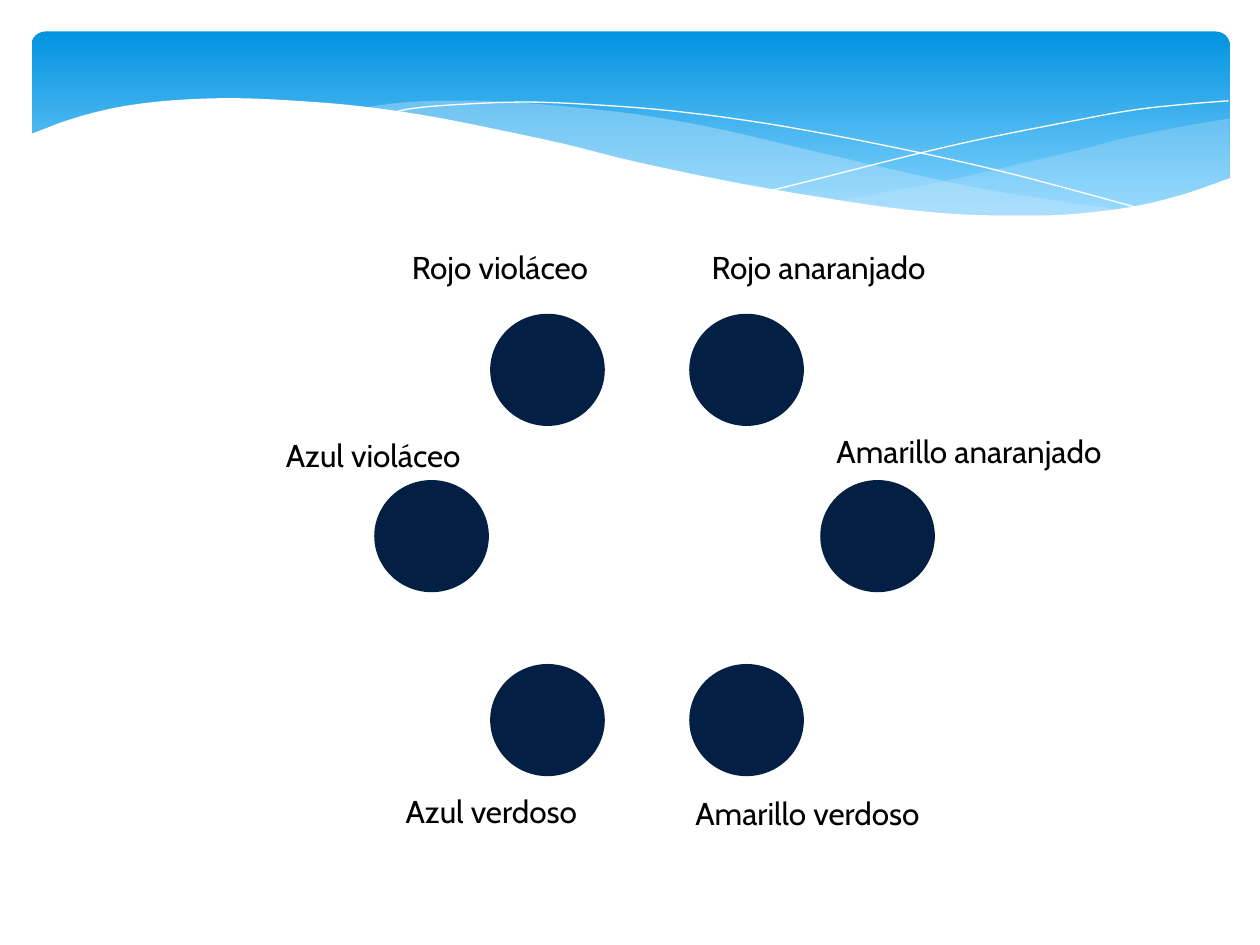
from dataclasses import dataclass

from lxml.etree import SubElement
from pptx import Presentation
from pptx.dml.color import RGBColor as RGB
from pptx.enum.shapes import MSO_SHAPE as Shape
from pptx.enum.text import MSO_AUTO_SIZE as AutoSize
from pptx.oxml.ns import qn
from pptx.util import Inches, Pt


@dataclass(frozen=True)
class Theme:
    font: str = "Cabin"
    label_size: int = 18
    text: str = "000000"
    paper: str = "FFFFFF"
    sky_top: str = "0293E0"
    sky_bottom: str = "83D3FE"
    ribbon: str = "C6E7FC"
    circle: str = "041F44"


CIRCLE_SIZE = (0.91, 0.89)

# Label, label box, wrap, circle position
COLOURS = [
    ("Rojo violáceo", (3.17, 1.92, 1.63, 0.4), False, (3.89, 2.49)),
    ("Rojo anaranjado", (5.55, 1.92, 1.94, 0.4), False, (5.47, 2.49)),
    ("Azul verdoso", (3.12, 6.24, 1.59, 0.4), False, (3.89, 5.27)),
    ("Amarillo anaranjado", (6.54, 3.38, 2.37, 0.4), True, (6.51, 3.81)),
    ("Amarillo verdoso", (5.42, 6.25, 2.01, 0.4), False, (5.47, 5.27)),
    ("Azul violáceo", (2.17, 3.41, 1.6, 0.4), False, (2.97, 3.81)),
]

RIGHT_RIBBON_TOP = [(9.76, 0.94), (9.35, 1.01), (8.91, 1.1), (8.61, 1.18),
                    (8.05, 1.31), (7.53, 1.43), (7.06, 1.52), (6.61, 1.6)]
RIGHT_RIBBON_BOTTOM = [(6.61, 1.6), (7.05, 1.65), (7.57, 1.7), (8.14, 1.72),
                       (8.63, 1.7), (9.05, 1.63), (9.42, 1.54), (9.76, 1.41)]
LONG_RIBBON_TOP = [(8.93, 1.67), (8.37, 1.59), (7.75, 1.49), (7.06, 1.34),
                   (6.29, 1.16), (5.69, 1.02), (5.14, 0.92), (4.65, 0.86),
                   (4.2, 0.82), (3.8, 0.8), (3.44, 0.8), (3.13, 0.82), (2.86, 0.86)]
LONG_RIBBON_BOTTOM = [(2.86, 0.86), (3.42, 0.94), (4.04, 1.06), (4.49, 1.16),
                      (5.3, 1.35), (6.01, 1.5), (6.65, 1.61), (7.22, 1.68),
                      (7.73, 1.72), (8.18, 1.73), (8.57, 1.71), (8.93, 1.67)]
FALLING_LINE = [(3.09, 0.9), (3.28, 0.86), (3.63, 0.83), (4.16, 0.81),
                (4.69, 0.83), (5.33, 0.88), (6.08, 0.98), (6.95, 1.14),
                (7.95, 1.36), (9.07, 1.66)]
RISING_LINE = [(6.13, 1.51), (6.53, 1.41), (7.2, 1.24), (7.76, 1.11),
               (8.36, 0.99), (8.95, 0.88), (9.38, 0.83), (9.75, 0.8)]
PAPER_EDGE = [(9.77, 1.41), (9.4, 1.54), (8.99, 1.64), (8.5, 1.7), (8.09, 1.71),
              (7.61, 1.7), (7.08, 1.65), (6.48, 1.56), (5.79, 1.44), (5.03, 1.28),
              (4.47, 1.14), (3.91, 1.02), (3.4, 0.92), (2.92, 0.85), (2.5, 0.81),
              (1.93, 0.78), (1.46, 0.79), (1.06, 0.83), (0.76, 0.89),
              (0.52, 0.96), (0.36, 1.02), (0.23, 1.07)]
PAPER_BASE = [(0.23, 2.24), (9.77, 2.24)]


def smooth(points, steps=5):
    """Return a Catmull-Rom curve that passes through the points."""
    padded = [points[0], *points, points[-1]]
    curve = [points[0]]
    for a, b, c, d in zip(padded, padded[1:], padded[2:], padded[3:]):
        for step in range(1, steps + 1):
            t = step / steps
            curve.append(tuple(
                0.5 * (2 * q + (r - p) * t + (2 * p - 5 * q + 4 * r - s) * t ** 2
                       + (3 * q - p - 3 * r + s) * t ** 3)
                for p, q, r, s in zip(a, b, c, d)))
    return curve


def set_values(target, values):
    for name, value in values.items():
        setattr(target, name, value)


class SlideBuilder:
    def __init__(self, slide, theme):
        self.slide = slide
        self.theme = theme

    def paint(self, shape, colour, opacity=100):
        shape.shadow.inherit = False
        shape.line.fill.background()
        shape.fill.solid()
        shape.fill.fore_color.rgb = RGB.from_string(colour)
        if opacity < 100:
            node = shape.element.spPr.find(".//" + qn("a:srgbClr"))
            SubElement(node, qn("a:alpha"), val=str(opacity * 1000))

    def sky(self, box):
        shape = self.slide.shapes.add_shape(
            Shape.ROUNDED_RECTANGLE, *map(Inches, box))
        shape.adjustments[0] = 0.071
        shape.shadow.inherit = False
        shape.line.fill.background()
        shape.fill.gradient()
        shape.fill.gradient_angle = 270
        stops = ((0, self.theme.sky_top), (0.9, self.theme.sky_bottom))
        for stop, (position, colour) in zip(shape.fill.gradient_stops, stops):
            stop.position = position
            stop.color.rgb = RGB.from_string(colour)

    def outline(self, group, points, close):
        start, *others = [tuple(map(Inches, point)) for point in points]
        builder = group.shapes.build_freeform(*start)
        builder.add_line_segments(others, close=close)
        return builder.convert_to_shape()

    def area(self, group, points, colour, opacity=100):
        self.paint(self.outline(group, points, True), colour, opacity)

    def curve(self, group, points):
        shape = self.outline(group, smooth(points), False)
        shape.shadow.inherit = False
        shape.fill.background()
        shape.line.color.rgb = RGB.from_string(self.theme.paper)
        shape.line.width = Pt(0)

    def waves(self):
        group = self.slide.shapes.add_group_shape()
        ribbon = self.theme.ribbon
        self.area(group, smooth(RIGHT_RIBBON_TOP) + smooth(RIGHT_RIBBON_BOTTOM),
                  ribbon, 29)
        self.area(group, smooth(LONG_RIBBON_TOP) + smooth(LONG_RIBBON_BOTTOM),
                  ribbon, 40)
        self.curve(group, FALLING_LINE)
        self.curve(group, RISING_LINE)
        self.area(group, smooth(PAPER_EDGE) + PAPER_BASE, self.theme.paper)

    def circle(self, position):
        shape = self.slide.shapes.add_shape(
            Shape.FLOWCHART_CONNECTOR, *map(Inches, position + CIRCLE_SIZE))
        self.paint(shape, self.theme.circle)

    def label(self, text, box, wrap):
        frame = self.slide.shapes.add_textbox(*map(Inches, box)).text_frame
        set_values(frame, {"word_wrap": wrap,
                           "auto_size": AutoSize.SHAPE_TO_FIT_TEXT})
        run = frame.paragraphs[0].add_run()
        run.text = text
        set_values(run.font, {"name": self.theme.font,
                              "size": Pt(self.theme.label_size)})
        run.font.color.rgb = RGB.from_string(self.theme.text)


def main():
    presentation = Presentation()
    set_values(presentation, {"slide_width": Inches(10),
                              "slide_height": Inches(7.5)})
    slide = presentation.slides.add_slide(presentation.slide_layouts[6])
    builder = SlideBuilder(slide, Theme())

    builder.sky((0.25, 0.25, 9.51, 1.56))
    builder.waves()
    for text, box, wrap, position in COLOURS:
        builder.label(text, box, wrap)
        builder.circle(position)

    presentation.save("out.pptx")


if __name__ == "__main__":
    main()
